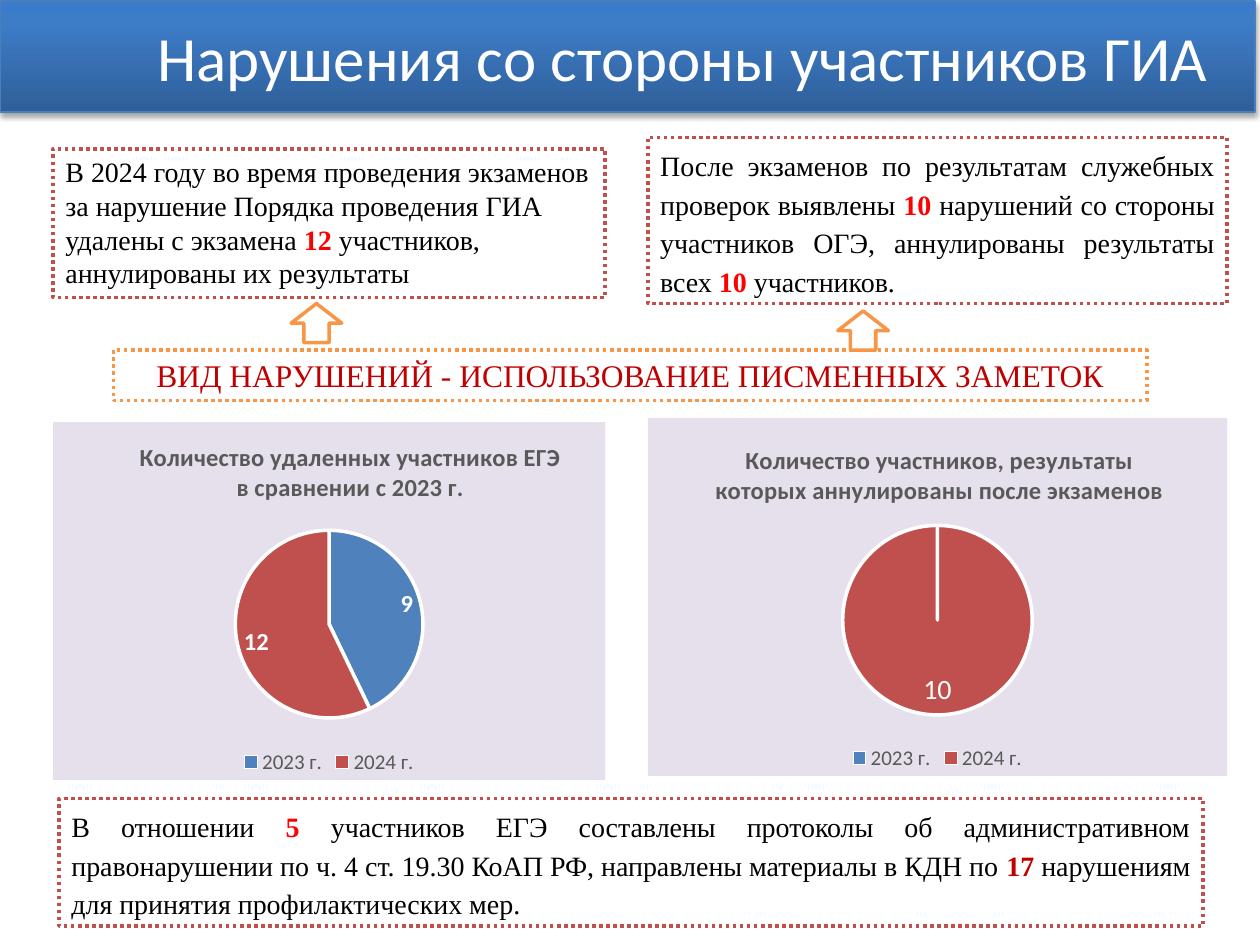
from copy import deepcopy

from lxml import etree
from pptx import Presentation
from pptx.chart.data import CategoryChartData
from pptx.dml.color import RGBColor
from pptx.enum import chart as charts, dml, shapes, text
from pptx.oxml import parse_xml
from pptx.oxml.ns import nsdecls, qn
from pptx.util import Cm, Pt

COLORS = {name: RGBColor.from_string(value) for name, value in {
    "white": "FFFFFF", "black": "000000", "gray": "595959",
    "red": "FF0000", "dark_red": "C00000", "brick": "C0504D",
    "orange": "F79646", "blue": "4F81BD", "lilac": "E6E0EC",
    "title_line": "4B7EBC", "title_dark": "2F5F99",
    "title_mid": "3D7CC7", "title_light": "3A7CCB",
}.items()}
ALIGN = text.PP_ALIGN


def add_outlined(kind, place, line_color):
    """Add a white shape with a 2 pt outline."""
    shape = slide.shapes.add_shape(kind, *map(Cm, place))
    shape.shadow.inherit = False
    shape.fill.solid()
    shape.fill.fore_color.rgb = COLORS["white"]
    shape.line.color.rgb = COLORS[line_color]
    shape.line.width = Pt(2)
    return shape


def set_layout(parent, index, **values):
    """Give a chart part a manual layout, in fractions of the chart."""
    for old in parent.findall(qn("c:layout")):
        parent.remove(old)
    layout = etree.Element(qn("c:layout"))
    manual = etree.SubElement(layout, qn("c:manualLayout"))
    if "w" in values:
        etree.SubElement(manual, qn("c:layoutTarget")).set("val", "inner")
    for mode in ("xMode", "yMode"):
        etree.SubElement(manual, qn("c:" + mode)).set("val", "edge")
    for name, value in values.items():
        etree.SubElement(manual, qn("c:" + name)).set("val", str(value))
    parent.insert(index, layout)


presentation = Presentation()
presentation.slide_width, presentation.slide_height = Cm(25.4), Cm(19.05)
slide = presentation.slides.add_slide(presentation.slide_layouts[5])

# Title band
title = slide.shapes.title
title.left, title.top, title.width, title.height = map(Cm, (0, 0.02, 25.3, 2.24))
title.line.color.rgb = COLORS["title_line"]
title.line.width = Pt(0.75)
title.fill.gradient()
title.fill.gradient_angle = 90
stop_list = title.element.spPr.find(".//" + qn("a:gsLst"))
stop_list.append(deepcopy(stop_list[-1]))
for stop, position, color in zip(title.fill.gradient_stops, (0, 0.8, 1),
                                 ("title_dark", "title_mid", "title_light")):
    stop.position = position
    stop.color.rgb = COLORS[color]
title.element.spPr.append(parse_xml(
    f'<a:effectLst {nsdecls("a")}>'
    '<a:outerShdw blurRad="39370" dist="22860" dir="5400000" rotWithShape="0">'
    '<a:srgbClr val="000000"><a:alpha val="35000"/></a:srgbClr>'
    '</a:outerShdw></a:effectLst>'))
frame = title.text_frame
frame.text = "Нарушения со стороны участников ГИА"
for name, value in {"auto_size": text.MSO_AUTO_SIZE.NONE, "word_wrap": False,
                    "vertical_anchor": text.MSO_ANCHOR.MIDDLE,
                    "margin_right": Cm(0.95)}.items():
    setattr(frame, name, value)
frame.paragraphs[0].alignment = ALIGN.RIGHT
font = frame.paragraphs[0].runs[0].font
font.name, font.size, font.color.rgb = "Calibri", Pt(36), COLORS["white"]

# Dotted text boxes: place, outline, size, paragraph format, runs
BOXES = [
    ((1.07, 3, 11.13, 3), "brick", 16,
     {"alignment": ALIGN.LEFT, "space_after": Pt(6)},
     [("В 2024 году во время проведения экзаменов за нарушение Порядка "
       "проведения ГИА удалены с экзамена ", "black"), ("12 ", "red"),
      ("участников, аннулированы их результаты", "black")]),
    ((13.06, 2.77, 11.68, 3.35), "brick", 16,
     {"alignment": ALIGN.JUSTIFY, "line_spacing": 1.15, "space_after": Pt(10)},
     [("После экзаменов по результатам служебных проверок выявлены ", "black"),
      ("10 ", "red"),
      ("нарушений со стороны участников ОГЭ, аннулированы результаты всех ",
       "black"), ("10 ", "red"), ("участников.", "black")]),
    ((1.19, 16.1, 23.06, 2.57), "brick", 16,
     {"alignment": ALIGN.JUSTIFY, "line_spacing": 1.15},
     [("В отношении ", "black"), ("5", "red"),
      (" участников ЕГЭ составлены протоколы об административном "
       "правонарушении по ч. 4 ст. 19.30 КоАП РФ, направлены материалы "
       "в КДН по ", "black"), ("17 ", "dark_red"),
      ("нарушениям для принятия профилактических мер.", "black")]),
    ((2.29, 7.06, 20.83, 1.02), "orange", 18, {"alignment": ALIGN.CENTER},
     [("ВИД НАРУШЕНИЙ - ИСПОЛЬЗОВАНИЕ ПИСМЕННЫХ ЗАМЕТОК", "dark_red")]),
]
for place, line_color, size, paragraph_format, runs in BOXES:
    box = add_outlined(shapes.MSO_SHAPE.RECTANGLE, place, line_color)
    box.line.dash_style = dml.MSO_LINE.ROUND_DOT
    frame = box.text_frame
    frame.word_wrap = True
    frame.auto_size = text.MSO_AUTO_SIZE.SHAPE_TO_FIT_TEXT
    frame.vertical_anchor = text.MSO_ANCHOR.TOP
    paragraph = frame.paragraphs[0]
    for name, value in paragraph_format.items():
        setattr(paragraph, name, value)
    for words, color in runs:
        run = paragraph.add_run()
        run.text = words
        run.font.name, run.font.size = "Times New Roman", Pt(size)
        run.font.bold = len(runs) > 1 and color != "black"
        run.font.color.rgb = COLORS[color]

for left, top in ((5.87, 6.12), (16.89, 6.27)):
    add_outlined(shapes.MSO_SHAPE.UP_ARROW, (left, top, 1.02, 0.79), "orange")

# Pie charts: place, title lines, title corner, values, label size, bold, position
LABELS = charts.XL_LABEL_POSITION
PIES = [
    ((1.07, 8.51, 11.13, 7.21),
     ["Количество удаленных участников ЕГЭ", "в сравнении с 2023 г."],
     (0.15, 0.04), (9, 12), 14, True, LABELS.BEST_FIT),
    ((13.06, 8.43, 11.68, 7.21),
     ["Количество участников, результаты", "которых аннулированы после экзаменов"],
     (0.11, 0.06), (0, 10), 16, False, LABELS.INSIDE_END),
]
for place, lines, corner, values, size, bold, position in PIES:
    data = CategoryChartData()
    data.categories = ["2023 г.", "2024 г."]
    data.add_series("Series 1", values)
    chart = slide.shapes.add_chart(charts.XL_CHART_TYPE.PIE, *map(Cm, place), data).chart
    chart.font.name, chart.font.size = "Calibri", Pt(10)

    frame = chart.chart_title.text_frame
    frame.text = "\n".join(lines)
    for paragraph in frame.paragraphs:
        paragraph.alignment = ALIGN.CENTER
        font = paragraph.runs[0].font
        font.name, font.size, font.bold = "Calibri", Pt(14), True
        font.color.rgb = COLORS["gray"]

    chart.has_legend = True
    chart.legend.position = charts.XL_LEGEND_POSITION.BOTTOM
    chart.legend.include_in_layout = False
    chart.legend.font.name, chart.legend.font.size = "Calibri", Pt(12)
    chart.legend.font.color.rgb = COLORS["gray"]

    plot = chart.plots[0]
    plot.vary_by_categories = True
    for index, color in enumerate(("blue", "brick")):
        slice_format = plot.series[0].points[index].format
        slice_format.fill.solid()
        slice_format.fill.fore_color.rgb = COLORS[color]
        slice_format.line.color.rgb = COLORS["white"]
        slice_format.line.width = Pt(2)
    labels = plot.series[0].data_labels
    for name, value in {"show_value": True, "position": position,
                        "number_format": "0;;;",
                        "number_format_is_linked": False}.items():
        setattr(labels, name, value)
    font = labels.font
    font.name, font.size, font.bold = "Calibri", Pt(size), bold
    font.color.rgb = COLORS["white"]

    chart_part = chart.element.find(qn("c:chart"))
    set_layout(chart_part.find(qn("c:title")), 1, x=corner[0], y=corner[1])
    height = 0.53
    width = round(height * place[3] / place[2], 2)
    set_layout(chart_part.find(qn("c:plotArea")), 0,
               x=(1 - width) / 2, y=0.3, w=width, h=height)
    chart_part.addnext(parse_xml(
        f'<c:spPr {nsdecls("c", "a")}><a:solidFill>'
        f'<a:srgbClr val="{COLORS["lilac"]}"/></a:solidFill>'
        '<a:ln><a:noFill/></a:ln></c:spPr>'))

presentation.save("out.pptx")
